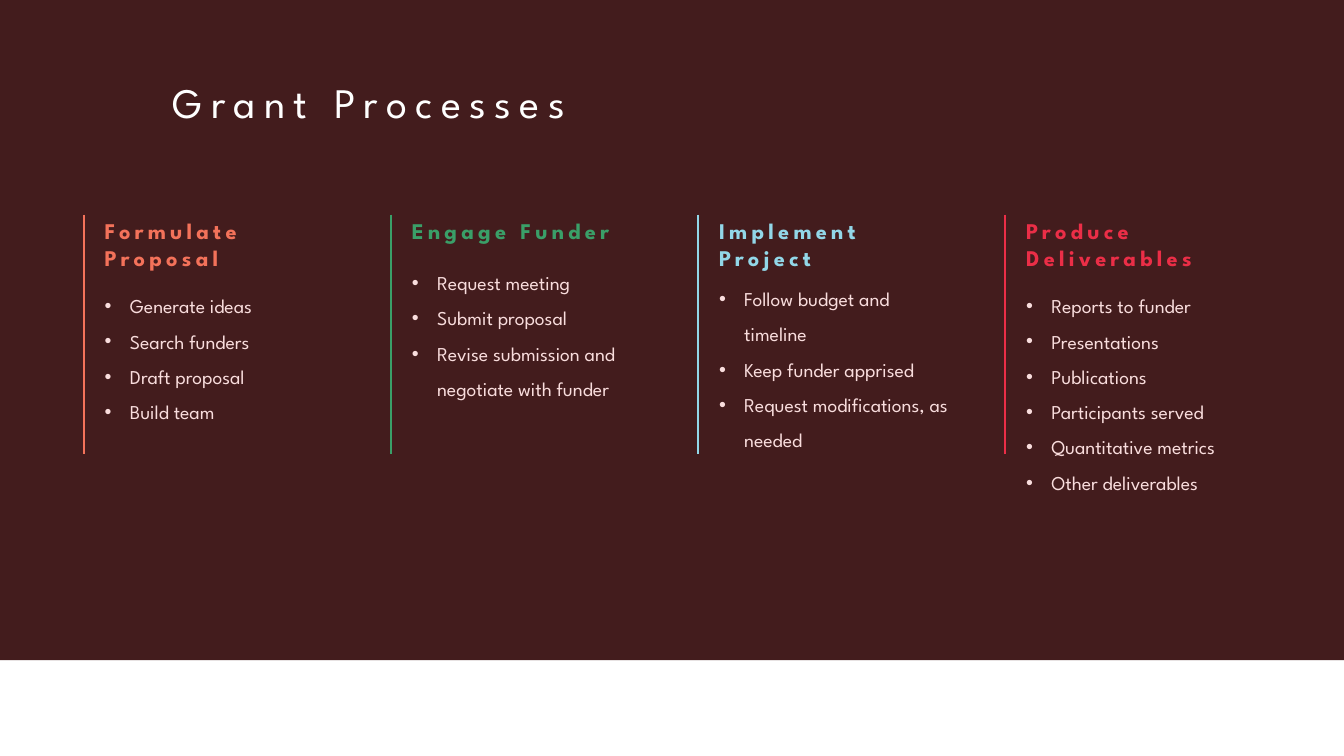
from collections import namedtuple
from dataclasses import dataclass

from lxml.etree import SubElement
from pptx import Presentation
from pptx.dml.color import RGBColor as RGB
from pptx.enum.shapes import MSO_CONNECTOR as Line, MSO_SHAPE as Shape
from pptx.oxml.ns import qn
from pptx.util import Cm, Pt


@dataclass(frozen=True)
class Theme:
    font: str = "League Spartan"
    backdrop: str = "431C1D"
    title: str = "FFFFFF"
    body: str = "F9DDDD"
    title_size: int = 60
    heading_size: int = 32
    body_size: int = 28
    title_spacing: int = 12
    heading_spacing: int = 6
    rule_width: int = 3


THEME = Theme()
Stage = namedtuple("Stage", "heading color heading_w heading_h top height inset items")
STAGES = [
    Stage("Formulate Proposal", "F3725A", 12.07, 3, 12.93, 9.09, 1.3,
          ["Generate ideas", "Search funders", "Draft proposal", "Build team"]),
    Stage("Engage Funder", "3A9F68", 12.07, 1.63, 12.93, 7.29, 0.13,
          ["Request meeting", "Submit proposal",
           "Revise submission and negotiate with funder"]),
    Stage("Implement Project", "92D7E8", 12.07, 3, 13.74, 9.09, 0.13,
          ["Follow budget and timeline", "Keep funder apprised",
           "Request modifications, as needed"]),
    Stage("Produce Deliverables", "EB2E47", 13.56, 3, 12.93, 12.67, 1.3,
          ["Reports to funder", "Presentations", "Publications",
           "Participants served", "Quantitative metrics", "Other deliverables"]),
]
RULE_LEFT, PITCH, TEXT_GAP = 4.22, 15.48, 0.81
HEADING_TOP, RULE_TOP, RULE_BOTTOM = 10.8, 10.82, 22.89
BODY_WIDTH = 12.07


def add_backdrop(s, width, height):
    sp = s.shapes.add_shape(Shape.RECTANGLE, 0, 0, width, height)
    sp.shadow.inherit = False
    sp.fill.solid()
    sp.fill.fore_color.rgb = RGB.from_string(THEME.backdrop)
    sp.line.fill.background()


def add_text_frame(s, left, top, width, height):
    tf = s.shapes.add_textbox(Cm(left), Cm(top), Cm(width), Cm(height)).text_frame
    tf.word_wrap = True
    return tf


def add_run(p, text, color, **formats):
    r = p.add_run()
    r.text = text
    r.font.color.rgb = RGB.from_string(color)
    for name, value in {"name": THEME.font, **formats}.items():
        setattr(r.font, name, value)
    return r


def add_spaced_text(s, box, text, color, spacing, **formats):
    tf = add_text_frame(s, *box)
    r = add_run(tf.paragraphs[0], text, color, **formats)
    r.font._element.set("spc", str(spacing * 100))


def add_bullets(s, box, inset, items):
    tf = add_text_frame(s, *box)
    tf.margin_top = Cm(inset)
    for i, item in enumerate(items):
        p = tf.add_paragraph() if i else tf.paragraphs[0]
        pPr = p._p.get_or_add_pPr()
        pPr.set("marL", str(Cm(1.27)))
        pPr.set("indent", str(-Cm(1.27)))
        SubElement(pPr, qn("a:buFont")).set("typeface", "Arial")
        SubElement(pPr, qn("a:buChar")).set("char", "•")
        p.line_spacing = 1.5
        add_run(p, item, THEME.body, size=Pt(THEME.body_size))


def add_rule(s, x, color):
    line = s.shapes.add_connector(
        Line.STRAIGHT, Cm(x), Cm(RULE_TOP), Cm(x), Cm(RULE_BOTTOM))
    line.line.color.rgb = RGB.from_string(color)
    line.line.width = Pt(THEME.rule_width)
    SubElement(line._element.spPr, qn("a:effectLst"))


def add_stage(s, x, stage):
    left = x + TEXT_GAP
    add_spaced_text(s, (left, HEADING_TOP, stage.heading_w, stage.heading_h),
                    stage.heading, stage.color, THEME.heading_spacing,
                    size=Pt(THEME.heading_size), bold=True)
    add_bullets(s, (left, stage.top, BODY_WIDTH, stage.height),
                stage.inset, stage.items)
    add_rule(s, x, stage.color)


def main():
    prs = Presentation()
    prs.slide_width, prs.slide_height = Cm(67.74), Cm(38.1)
    s = prs.slides.add_slide(prs.slide_layouts[6])
    add_backdrop(s, prs.slide_width, Cm(33.27))
    add_spaced_text(s, (8.46, 3.73, 35.61, 2.82), "Grant Processes", THEME.title,
                    THEME.title_spacing, size=Pt(THEME.title_size))
    for i, stage in enumerate(STAGES):
        add_stage(s, RULE_LEFT + i * PITCH, stage)
    prs.save("out.pptx")


if __name__ == "__main__":
    main()
